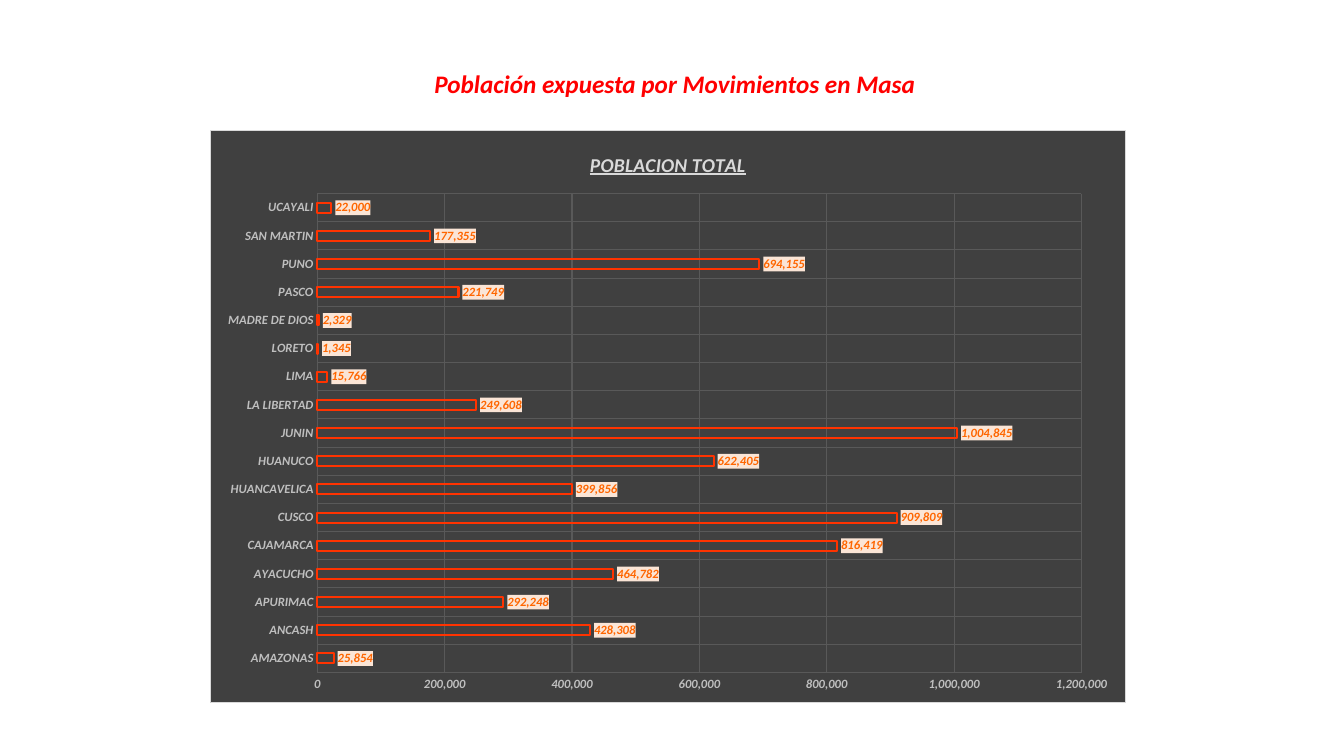
from lxml.etree import SubElement
from pptx import Presentation
from pptx.chart.data import CategoryChartData
from pptx.dml.color import RGBColor
from pptx.enum.chart import XL_CHART_TYPE as ChartType
from pptx.enum.chart import XL_LABEL_POSITION as LabelPos
from pptx.enum.chart import XL_TICK_MARK as TickMark
from pptx.enum.text import MSO_ANCHOR, PP_ALIGN
from pptx.oxml import parse_xml
from pptx.oxml.ns import nsdecls, qn
from pptx.util import Pt

TITLE = "Población expuesta por Movimientos en Masa"
CHART_TITLE = "POBLACION TOTAL"
POPULATION = {
    "AMAZONAS": 25854, "ANCASH": 428308, "APURIMAC": 292248,
    "AYACUCHO": 464782, "CAJAMARCA": 816419, "CUSCO": 909809,
    "HUANCAVELICA": 399856, "HUANUCO": 622405, "JUNIN": 1004845,
    "LA LIBERTAD": 249608, "LIMA": 15766, "LORETO": 1345,
    "MADRE DE DIOS": 2329, "PASCO": 221749, "PUNO": 694155,
    "SAN MARTIN": 177355, "UCAYALI": 22000,
}
TITLE_BOX = (301, 45, 362, 29)
CHART_BOX = (149.8, 93, 654.5, 409.5)
PLOT_LAYOUT = {"x": 0.117, "y": 0.11, "w": 0.835, "h": 0.837}
NUMBER_FORMAT = "#,##0"


def rgb(color):
    return RGBColor.from_string(color)


def set_font(font, size, color, **extra):
    values = {"name": "Calibri", "size": Pt(size), "bold": True, "italic": True, **extra}
    for name, value in values.items():
        setattr(font, name, value)
    font.color.rgb = rgb(color)


def fill_xml(fill, border=None):
    """Shape properties for chart parts that have no format object."""
    solid = '<a:solidFill><a:srgbClr val="{}"/></a:solidFill>'.format
    line = f'<a:ln w="{Pt(0.75)}">{solid(border)}</a:ln>' if border else ""
    return parse_xml(f'<c:spPr {nsdecls("c", "a")}>{solid(fill)}{line}</c:spPr>')


def add_title(slide):
    sp = slide.shapes.title
    sp.left, sp.top, sp.width, sp.height = map(Pt, TITLE_BOX)
    tf = sp.text_frame
    tf.text = TITLE
    tf.word_wrap = False
    tf.vertical_anchor = MSO_ANCHOR.MIDDLE
    p = tf.paragraphs[0]
    p.alignment = PP_ALIGN.CENTER
    set_font(p.runs[0].font, 18, "FF0000")


def style_axis(axis):
    axis.major_tick_mark = axis.minor_tick_mark = TickMark.NONE
    axis.format.line.fill.background()
    axis.has_major_gridlines = True
    grid = axis.major_gridlines.format.line
    grid.color.rgb = rgb("595959")
    grid.width = Pt(0.75)
    set_font(axis.tick_labels.font, 9, "BFBFBF")


def style_series(plot):
    plot.gap_width, plot.overlap = 182, -50
    plot.vary_by_categories = False
    series = plot.series[0]
    series.format.fill.background()
    series.format.line.color.rgb = rgb("FF3300")
    series.format.line.width = Pt(1.5)
    plot.has_data_labels = True
    labels = plot.data_labels
    values = {"show_value": True, "position": LabelPos.OUTSIDE_END,
              "number_format": NUMBER_FORMAT, "number_format_is_linked": False}
    for name, value in values.items():
        setattr(labels, name, value)
    set_font(labels.font, 9, "FF6600")
    labels.font._element.getparent().getparent()
    txpr = plot._element.find(qn("c:dLbls")).find(qn("c:txPr"))
    txpr.addprevious(fill_xml("FBE5D6"))


def place_plot(plot_area):
    for old in plot_area.findall(qn("c:layout")):
        plot_area.remove(old)
    layout = parse_xml(f'<c:layout {nsdecls("c")}><c:manualLayout/></c:layout>')
    values = {"layoutTarget": "inner", "xMode": "edge", "yMode": "edge", **PLOT_LAYOUT}
    for name, value in values.items():
        SubElement(layout[0], qn(f"c:{name}")).set("val", str(value))
    plot_area.insert(0, layout)


def add_population_chart(slide):
    data = CategoryChartData(number_format=NUMBER_FORMAT)
    data.categories = list(POPULATION)
    data.add_series(CHART_TITLE, list(POPULATION.values()))
    chart = slide.shapes.add_chart(ChartType.BAR_CLUSTERED, *map(Pt, CHART_BOX), data).chart
    chart.has_legend = False
    chart.font.name, chart.font.size = "Calibri", Pt(10)
    chart.has_title = True
    tf = chart.chart_title.text_frame
    tf.text = CHART_TITLE
    set_font(tf.paragraphs[0].runs[0].font, 14, "D9D9D9", underline=True)
    chart.chart_title.include_in_layout = False

    for axis in (chart.category_axis, chart.value_axis):
        style_axis(axis)
    scale = {"minimum_scale": 0, "maximum_scale": 1200000, "major_unit": 200000}
    for name, value in scale.items():
        setattr(chart.value_axis, name, value)
    ticks = chart.value_axis.tick_labels
    ticks.number_format, ticks.number_format_is_linked = NUMBER_FORMAT, False

    style_series(chart.plots[0])
    body = chart._chartSpace.find(qn("c:chart"))
    place_plot(body.find(qn("c:plotArea")))
    body.addnext(fill_xml("404040", "D9D9D9"))


def main():
    prs = Presentation()
    prs.slide_width, prs.slide_height = Pt(960), Pt(540)
    slide = prs.slides.add_slide(prs.slide_layouts[5])
    add_title(slide)
    add_population_chart(slide)
    prs.save("out.pptx")


if __name__ == "__main__":
    main()
